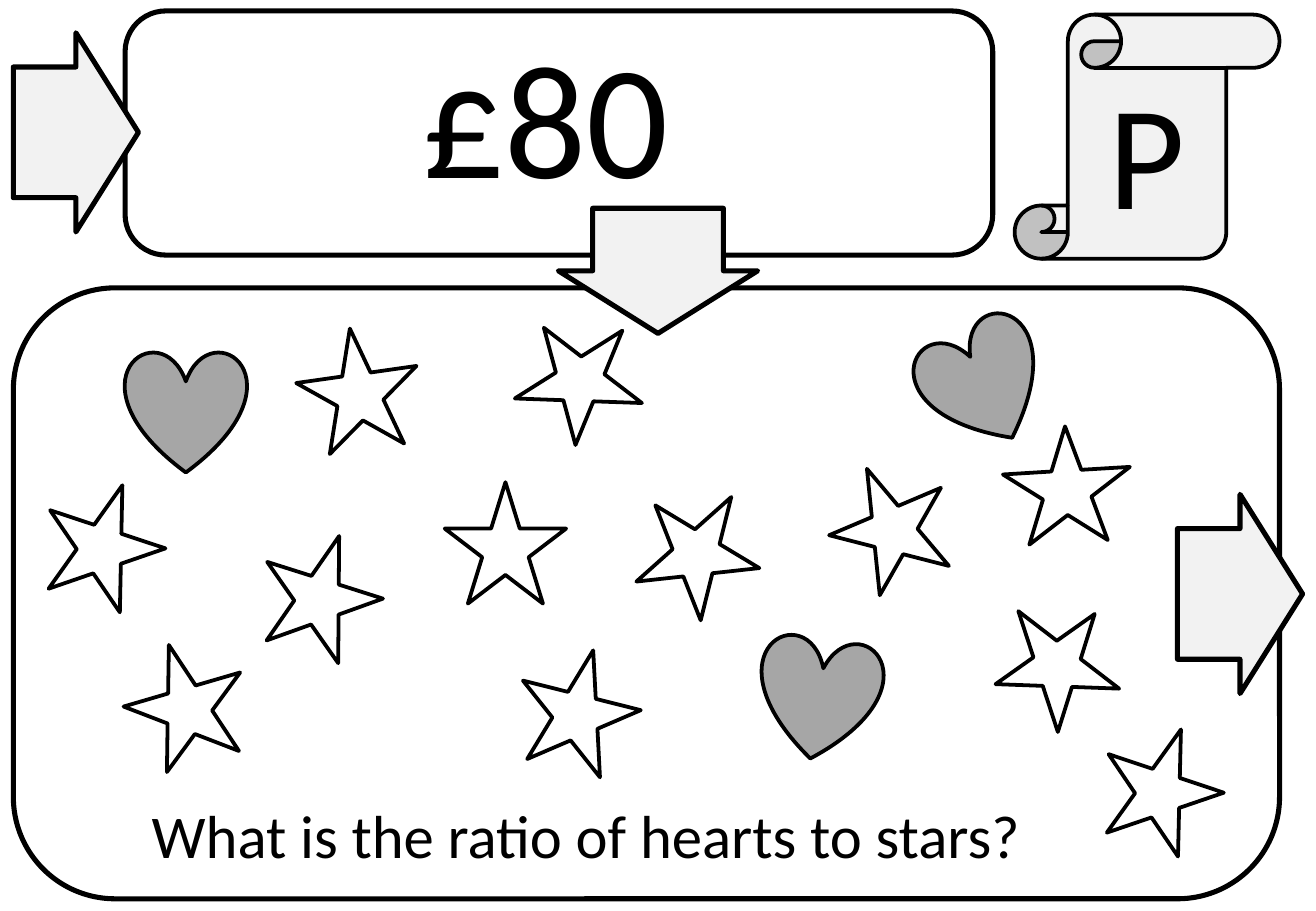
from pptx import Presentation
from pptx.dml.color import RGBColor
from pptx.enum.shapes import MSO_SHAPE
from pptx.enum.text import MSO_ANCHOR, MSO_AUTO_SIZE, PP_ALIGN
from pptx.util import Inches, Pt

COLORS = {"ink": "000000", "pale": "F2F2F2", "heart": "A6A6A6"}
CELL = 0.1  # inches; the slide is a grid of 108.3 columns by 75 rows
COLUMNS, ROWS = 108.3, 75
SYMBOL = 10  # cells across a heart or star

# column, row, rotation
HEARTS = [(10.3, 28.9, 0), (76, 26.6, 332.6), (62.4, 52.5, 8.2)]
STARS = [
    (36.6, 39.7, 0), (68.3, 38.2, 337), (81.7, 49.4, 324.7),
    (42.6, 53.4, 14.1), (10.3, 52.9, 343.7), (3.5, 39.7, 18.3),
    (24.5, 27, 351.9), (42.2, 26.5, 254.9), (52.6, 40.2, 31.1),
    (21.4, 43.9, 17.6), (90.6, 59.8, 18.5), (83.3, 35.2, 69.4),
]
ARROWS = [(96.9, 40.7, 0), (49, 14.1, 90), (1.1, 2.7, 0)]


def cells(*counts):
    return [Inches(n * CELL) for n in counts]


def color(name):
    return RGBColor.from_string(COLORS[name])


class Card:
    """Draws the parts of a question card on one slide."""

    font = "Calibri"

    def __init__(self, prs):
        self.slide = prs.slides.add_slide(prs.slide_layouts[5])

    def shape(self, kind, box, fill=None, line=2.25, rotation=0, adjust=None):
        s = self.slide.shapes.add_shape(kind, *cells(*box))
        s.shadow.inherit = False
        s.rotation = rotation
        if adjust is not None:
            s.adjustments[0] = adjust
        if fill:
            s.fill.solid()
            s.fill.fore_color.rgb = color(fill)
        else:
            s.fill.background()
        s.line.color.rgb = color("ink")
        s.line.width = Pt(line)
        return s

    def label(self, s, text, size, align=PP_ALIGN.LEFT, anchor=MSO_ANCHOR.TOP):
        tf = s.text_frame
        tf.text = text
        tf.vertical_anchor = anchor
        p = tf.paragraphs[0]
        p.alignment = align
        p.font.name = self.font
        p.font.size = Pt(size)
        p.font.color.rgb = color("ink")
        return tf

    def title(self, text, box, size):
        s = self.slide.shapes.title
        s.left, s.top, s.width, s.height = cells(*box)
        self.fit(self.label(s, text, size))

    def text(self, text, box, size):
        s = self.slide.shapes.add_textbox(*cells(*box))
        self.fit(self.label(s, text, size))

    def fit(self, tf):
        tf.word_wrap = False
        tf.auto_size = MSO_AUTO_SIZE.SHAPE_TO_FIT_TEXT

    def panel(self, box):
        self.shape(MSO_SHAPE.ROUNDED_RECTANGLE, box, line=3)

    def arrow(self, column, row, rotation):
        self.shape(MSO_SHAPE.RIGHT_ARROW, (column, row, 10.3, 16.4),
                   "pale", 3, rotation, adjust=0.656)

    def scroll(self, text, box, size):
        s = self.shape(MSO_SHAPE.VERTICAL_SCROLL, box, "pale", adjust=0.218)
        self.label(s, text, size, PP_ALIGN.CENTER, MSO_ANCHOR.MIDDLE)

    def symbols(self, kind, places, fill=None):
        for column, row, rotation in places:
            self.shape(kind, (column, row, SYMBOL, SYMBOL), fill,
                       rotation=rotation)


def main():
    prs = Presentation()
    prs.slide_width, prs.slide_height = cells(COLUMNS, ROWS)
    card = Card(prs)
    card.panel((1.1, 23.7, 104.2, 50.3))
    card.panel((10.3, 0.9, 71.4, 20.1))
    for place in ARROWS:
        card.arrow(*place)
    card.scroll("P", (83.5, 1.2, 21.8, 20.1), 88)
    card.text("What is the ratio of hearts to stars?",
              (11.5, 65.2, 74.1, 7.1), 36)
    card.title("£80", (33.8, 0.9, 22.5, 17.2), 96)
    card.symbols(MSO_SHAPE.HEART, HEARTS, "heart")
    card.symbols(MSO_SHAPE.STAR_5_POINT, STARS)
    prs.save("out.pptx")


if __name__ == "__main__":
    main()
